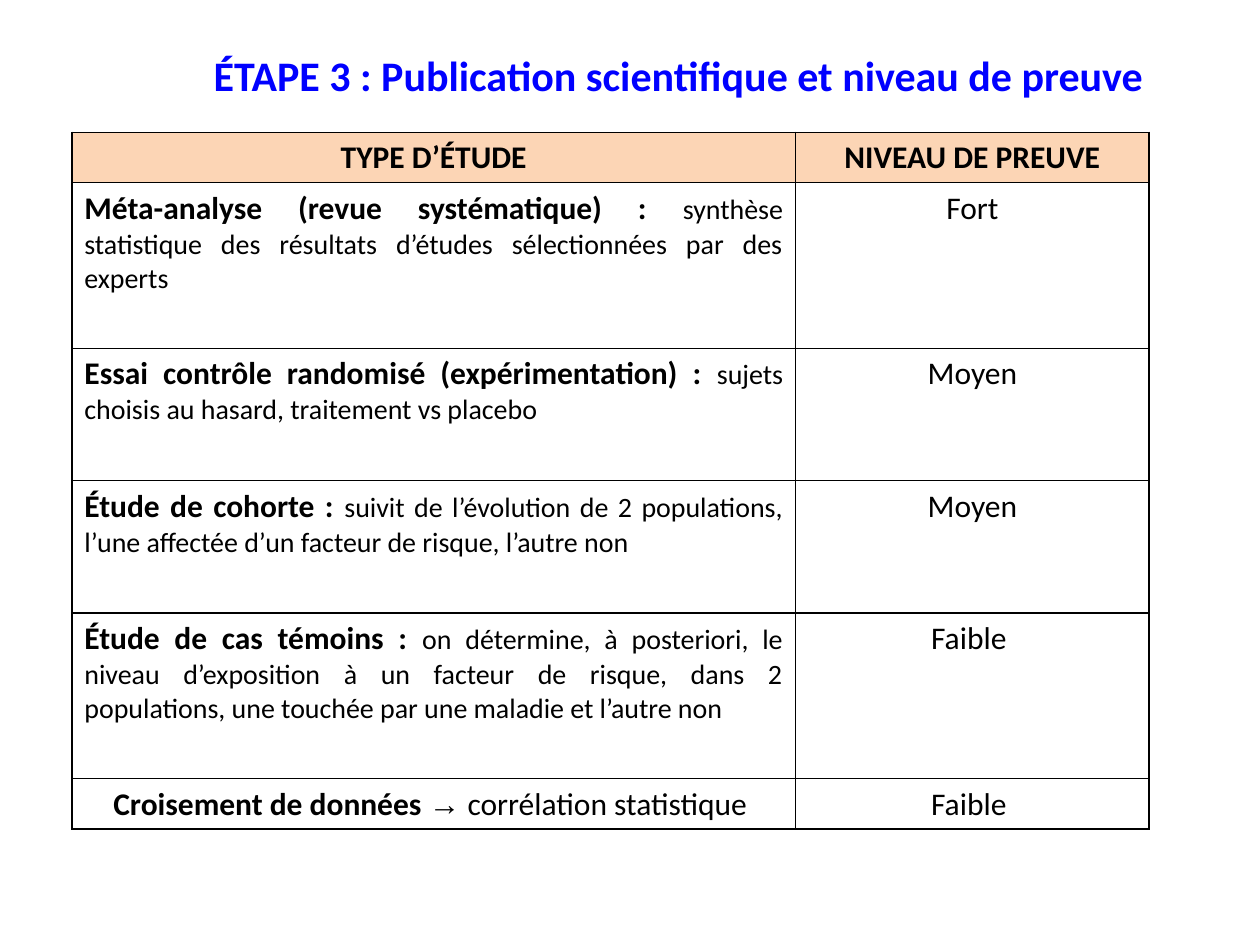
from lxml.etree import SubElement
from pptx import Presentation
from pptx.dml.color import RGBColor
from pptx.enum.text import MSO_ANCHOR, PP_ALIGN
from pptx.oxml.ns import qn
from pptx.util import Inches, Pt

BLACK, BLUE, PEACH = "000000", "0000FF", "FCD5B5"
CENTER, JUSTIFY = PP_ALIGN.CENTER, PP_ALIGN.JUSTIFY


def rgb(value):
    return RGBColor.from_string(value)


class Deck:
    """Style and current slide; lengths are units of a 100 x 75 grid."""

    font, size, line = "Calibri", 18, 0.96

    def __init__(self):
        self.prs = Presentation()
        self.prs.slide_width, self.prs.slide_height = Inches(10), Inches(7.5)
        self.s = self.prs.slides.add_slide(self.prs.slide_layouts[6])

    def grid(self, n):
        return int(self.prs.slide_width * n / 100)

    def add_runs(self, tf, runs, align, color=BLACK):
        """Each run is (text, bold, size) with an optional font."""
        p = tf.paragraphs[0]
        p.alignment = align
        for text, bold, size, *font in runs:
            r = p.add_run()
            r.text = text
            r.font.name = font[0] if font else self.font
            r.font.size, r.font.bold = Pt(size), bold
            r.font.color.rgb = rgb(color)

    def title(self, text, x, y, w, h):
        tf = self.s.shapes.add_textbox(*map(self.grid, (x, y, w, h))).text_frame
        tf.word_wrap = True
        self.add_runs(tf, [(text, True, 24)], CENTER, BLUE)

    def borders(self, cell):
        tc_pr = cell._tc.get_or_add_tcPr()
        for side in ("lnL", "lnR", "lnT", "lnB"):
            ln = SubElement(tc_pr, qn(f"a:{side}"), w=str(int(Pt(self.line))))
            fill = SubElement(ln, qn("a:solidFill"))
            SubElement(fill, qn("a:srgbClr"), val=BLACK)

    def cell(self, cell, runs, align, fill=None):
        self.borders(cell)
        if fill:
            cell.fill.solid()
            cell.fill.fore_color.rgb = rgb(fill)
        else:
            cell.fill.background()
        cell.vertical_anchor = MSO_ANCHOR.TOP
        self.add_runs(cell.text_frame, runs, align)

    def table(self, header, rows, x, y, widths, heights):
        frame = self.s.shapes.add_table(
            len(heights), len(widths),
            *map(self.grid, (x, y, sum(widths), sum(heights))))
        table = frame.table
        table.first_row = table.horz_banding = False
        for column, width in zip(table.columns, widths):
            column.width = self.grid(width)
        for row, height in zip(table.rows, heights):
            row.height = self.grid(height)
        for j, text in enumerate(header):
            self.cell(table.cell(0, j), [(text, True, self.size)], CENTER, PEACH)
        for i, (runs, align, level) in enumerate(rows, 1):
            self.cell(table.cell(i, 0), runs, align)
            self.cell(table.cell(i, 1), [(level, False, self.size)], CENTER)


def study(name, detail, level):
    return [(name, True, 18), (detail, False, 16)], JUSTIFY, level


def main():
    deck = Deck()

    # Title
    deck.title("ÉTAPE 3 : Publication scientifique et niveau de preuve",
               12.4, 3.4, 82.9, 5)

    # Study types and their level of evidence
    rows = [
        study("Méta-analyse (revue systématique) : ",
              "synthèse statistique des résultats d’études sélectionnées "
              "par des experts", "Fort"),
        study("Essai contrôle randomisé (expérimentation) : ",
              "sujets choisis au hasard, traitement vs placebo ", "Moyen"),
        study("Étude de cohorte : ",
              "suivit de l’évolution de 2 populations, l’une affectée d’un "
              "facteur de risque, l’autre non", "Moyen"),
        study("Étude de cas témoins : ",
              "on détermine, à posteriori, le niveau d’exposition à un facteur "
              "de risque, dans 2 populations, une touchée par une maladie et "
              "l’autre non", "Faible "),
        ([("Croisement de données ", True, 18), ("→", False, 18, "Arial"),
          (" corrélation statistique ", False, 18)], CENTER, "Faible "),
    ]
    short, medium, tall = 4, 10.5, 13.15
    deck.table(("TYPE D’ÉTUDE", "NIVEAU DE PREUVE"), rows, 5.7, 10.5,
               (57.45, 28.05), (short, tall, medium, medium, tall, short))

    deck.prs.save("out.pptx")


if __name__ == "__main__":
    main()
